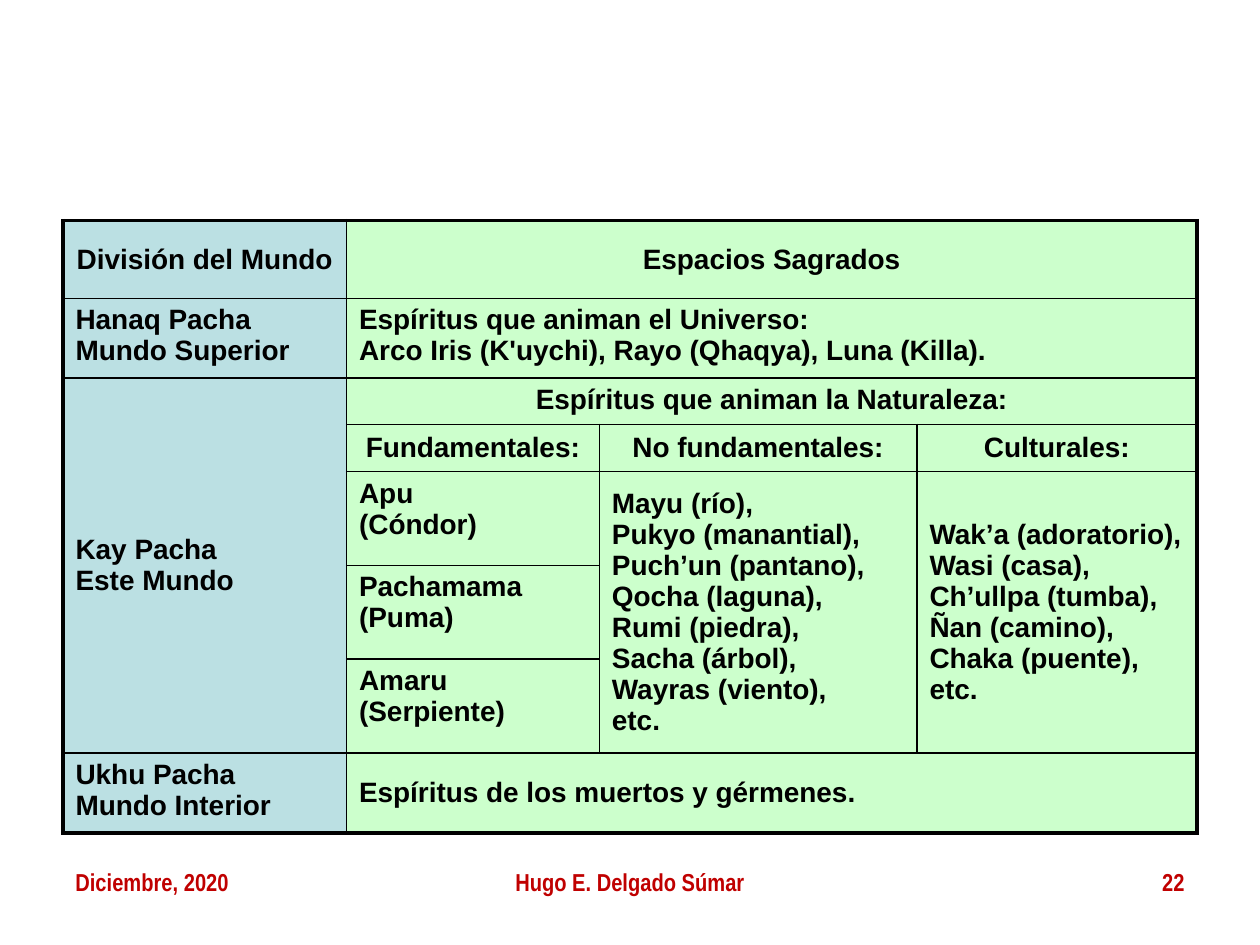
from lxml import etree
from pptx import Presentation
from pptx.dml.color import RGBColor
from pptx.enum import text
from pptx.oxml import ns
from pptx.util import Pt

BLACK = RGBColor(0x00, 0x00, 0x00)
RED = RGBColor(0xC0, 0x00, 0x00)
BLUE = RGBColor(0xBB, 0xE0, 0xE3)
GREEN = RGBColor(0xCC, 0xFF, 0xCC)
LEFT, CENTER, RIGHT = text.PP_ALIGN.LEFT, text.PP_ALIGN.CENTER, text.PP_ALIGN.RIGHT
TOP, MIDDLE = text.MSO_ANCHOR.TOP, text.MSO_ANCHOR.MIDDLE

# left, width, alignment, wording
FOOTERS = [
    (36, 168, LEFT, "Diciembre, 2020"),
    (246, 228, CENTER, "Hugo E. Delgado Súmar"),
    (516, 168, RIGHT, "22"),
]
FOOTER_TOP, FOOTER_HEIGHT = 492, 37.5

TABLE_LEFT, TABLE_TOP = 36, 126
COLUMN_WIDTHS = [162, 144.5, 181.5, 160]
ROW_HEIGHTS = [44.5, 45.5, 26.5, 27, 53.5, 53.5, 53.5, 45.5]
OUTER_LINE, INNER_LINE = 2.25, 1

# row, column, rows spanned, columns spanned, alignment, anchor, wording
CELLS = [
    (0, 0, 1, 1, CENTER, MIDDLE, "División del Mundo"),
    (0, 1, 1, 3, CENTER, MIDDLE, "Espacios Sagrados"),
    (1, 0, 1, 1, LEFT, TOP, "Hanaq Pacha\nMundo Superior"),
    (1, 1, 1, 3, LEFT, TOP, "Espíritus que animan el Universo:\n"
                            "Arco Iris (K'uychi), Rayo (Qhaqya), Luna (Killa)."),
    (2, 0, 5, 1, LEFT, MIDDLE, "Kay Pacha\nEste Mundo"),
    (2, 1, 1, 3, CENTER, TOP, "Espíritus que animan la Naturaleza:"),
    (3, 1, 1, 1, CENTER, MIDDLE, "Fundamentales:"),
    (3, 2, 1, 1, CENTER, MIDDLE, "No fundamentales:"),
    (3, 3, 1, 1, CENTER, MIDDLE, "Culturales:"),
    (4, 1, 1, 1, LEFT, TOP, "Apu\n(Cóndor)"),
    (4, 2, 3, 1, LEFT, MIDDLE, "Mayu (río),\nPukyo (manantial), Puch’un (pantano),\n"
                               "Qocha (laguna),\nRumi (piedra),\nSacha (árbol),\n"
                               "Wayras (viento),\netc."),
    (4, 3, 3, 1, LEFT, MIDDLE, "Wak’a (adoratorio),\nWasi (casa), Ch’ullpa (tumba), "
                               "Ñan (camino), Chaka (puente), etc."),
    (5, 1, 1, 1, LEFT, TOP, "Pachamama (Puma)"),
    (6, 1, 1, 1, LEFT, TOP, "Amaru (Serpiente)"),
    (7, 0, 1, 1, LEFT, TOP, "Ukhu Pacha\nMundo Interior"),
    (7, 1, 1, 3, LEFT, MIDDLE, "Espíritus de los muertos y gérmenes."),
]


def write(frame, wording, align, font_name, size, color):
    frame.text = wording
    for paragraph in frame.paragraphs:
        paragraph.alignment = align
        for run in paragraph.runs:
            run.font.name, run.font.size = font_name, Pt(size)
            run.font.bold = True
            run.font.color.rgb = color


def set_borders(cell, widths):
    """Draw the left, right, top and bottom lines; they must precede the fill."""
    properties = cell._tc.get_or_add_tcPr()
    for index, (side, width) in enumerate(zip("LRTB", widths)):
        line = etree.Element(ns.qn(f"a:ln{side}"), w=str(Pt(width)))
        fill = etree.SubElement(line, ns.qn("a:solidFill"))
        etree.SubElement(fill, ns.qn("a:srgbClr"), val=str(BLACK))
        properties.insert(index, line)


def add_worlds_table(slide):
    row_count, column_count = len(ROW_HEIGHTS), len(COLUMN_WIDTHS)
    table = slide.shapes.add_table(
        row_count, column_count, Pt(TABLE_LEFT), Pt(TABLE_TOP),
        Pt(sum(COLUMN_WIDTHS)), Pt(sum(ROW_HEIGHTS))).table
    table.first_row = table.horz_banding = False
    for column, width in zip(table.columns, COLUMN_WIDTHS):
        column.width = Pt(width)
    for row, height in zip(table.rows, ROW_HEIGHTS):
        row.height = Pt(height)

    for top, left, down, across, align, anchor, wording in CELLS:
        bottom, right = top + down, left + across
        cell = table.cell(top, left)
        if down * across > 1:
            cell.merge(table.cell(bottom - 1, right - 1))
        cell.vertical_anchor = anchor
        write(cell.text_frame, wording, align, "Arial", 16, BLACK)
        on_edge = (left == 0, right == column_count, top == 0, bottom == row_count)
        widths = [OUTER_LINE if edge else INNER_LINE for edge in on_edge]
        for r in range(top, bottom):
            for c in range(left, right):
                part = table.cell(r, c)
                part.fill.solid()
                part.fill.fore_color.rgb = BLUE if c == 0 else GREEN
                set_borders(part, widths)


def add_footers(slide):
    for left, width, align, wording in FOOTERS:
        footer = slide.shapes.add_textbox(
            Pt(left), Pt(FOOTER_TOP), Pt(width), Pt(FOOTER_HEIGHT))
        footer.text_frame.word_wrap = True
        write(footer.text_frame, wording, align, "Arial Narrow", 14, RED)


def main():
    deck = Presentation()
    deck.slide_width, deck.slide_height = Pt(720), Pt(540)
    slide = deck.slides.add_slide(deck.slide_layouts[6])
    add_footers(slide)
    add_worlds_table(slide)
    deck.save("out.pptx")


if __name__ == "__main__":
    main()
